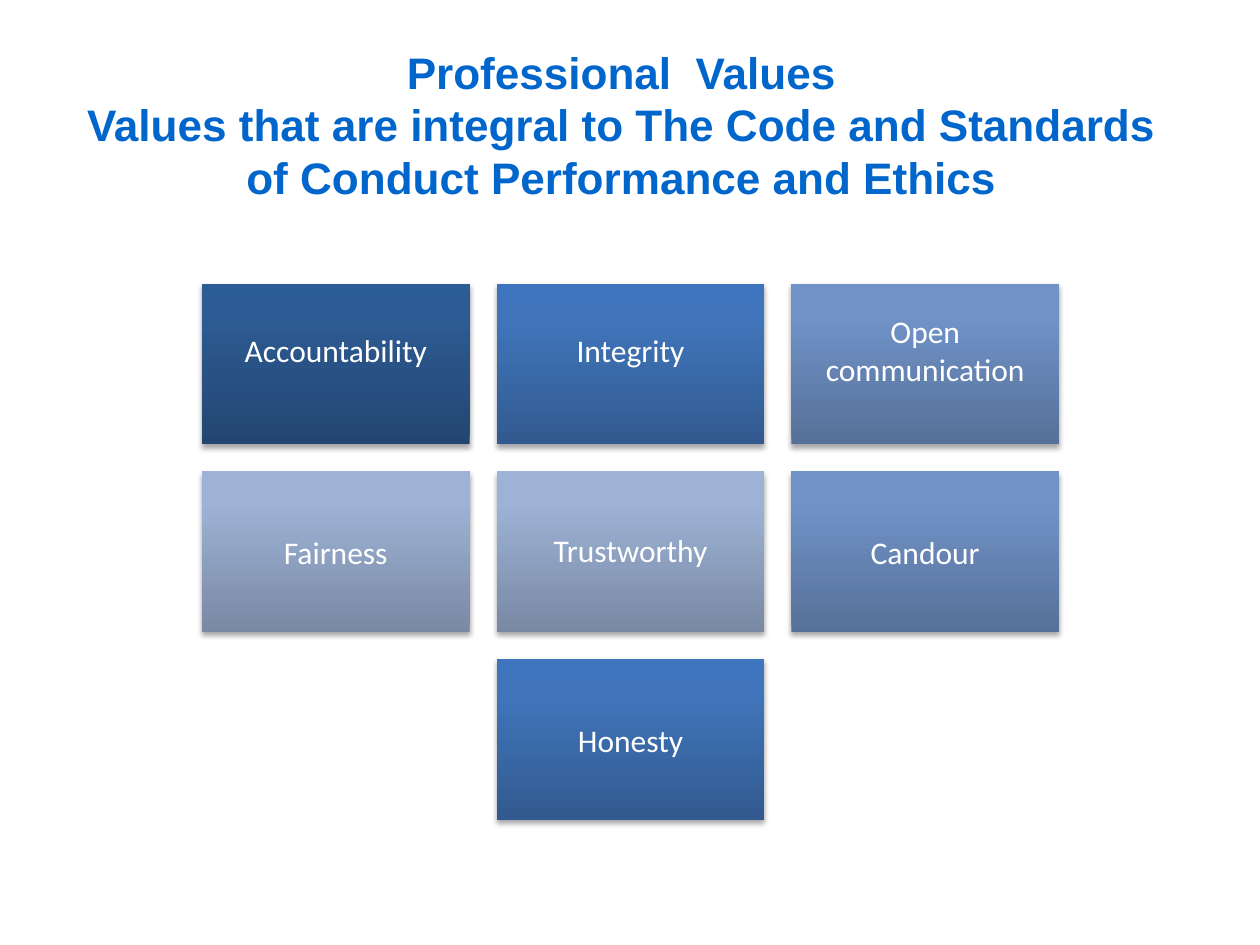
"""Build the professional values slide with its grid of gradient tiles."""
from copy import deepcopy

from lxml.etree import SubElement
from pptx import Presentation
from pptx.dml.color import RGBColor
from pptx.enum.shapes import MSO_SHAPE
from pptx.enum.text import MSO_ANCHOR, PP_ALIGN
from pptx.oxml.ns import qn
from pptx.util import Pt

COLORS = {"title": "0066CC", "text": "FFFFFF", "shadow": "000000"}
GRADIENTS = {
    "navy": ("234671", "2D5B93", "2B5C96"),
    "blue": ("325A90", "4075BB", "3E75BE"),
    "steel": ("567199", "7092C7", "6F93CA"),
    "pale": ("7989A4", "9DB2D5", "9DB2D7"),
}
STOPS = (0, 0.8, 1)
TILE_WIDTH, TILE_HEIGHT, GAP = 153, 91.8, 15.4
GRID_LEFT, GRID_TOP = 115.4, 162.2
INSET, RAISED_INSET = 5, 21.5
TILES = [
    ("Accountability", "navy", 0, 0, RAISED_INSET, 1),
    ("Integrity", "blue", 0, 1, RAISED_INSET, 1),
    ("Open communication", "steel", 0, 2, RAISED_INSET, 1),
    ("Fairness", "pale", 1, 0, INSET, 1),
    ("Trustworthy", "pale", 1, 1, INSET, 0.9),
    ("Candour", "steel", 1, 2, INSET, 1),
    ("Honesty", "blue", 2, 1, INSET, 1),
]


def add_span(para, text, font_name, size, color, bold=False):
    span = para.add_run()
    span.text = text
    span.font.name = font_name
    span.font.size = Pt(size)
    span.font.bold = bold
    span.font.color.rgb = RGBColor.from_string(color)


def style_tile(tile, gradient):
    tile.line.fill.background()
    tile.fill.gradient()
    tile.fill.gradient_angle = 90
    stop_list = tile._element.spPr.find(".//" + qn("a:gsLst"))
    stop_list.append(deepcopy(stop_list[-1]))
    for stop, position, color in zip(tile.fill.gradient_stops, STOPS, gradient):
        stop.position = position
        stop.color.rgb = RGBColor.from_string(color)
    tile.shadow.inherit = False
    effects = tile._element.spPr.find(qn("a:effectLst"))
    shadow = SubElement(effects, qn("a:outerShdw"), blurRad=str(Pt(3.1)),
                        dist=str(Pt(1.8)), dir="5400000", rotWithShape="0")
    shadow_color = SubElement(shadow, qn("a:srgbClr"), val=COLORS["shadow"])
    SubElement(shadow_color, qn("a:alpha"), val="35000")


deck = Presentation()
deck.slide_width, deck.slide_height = Pt(720), Pt(540)
page = deck.slides.add_slide(deck.slide_layouts[6])

title = page.shapes.add_textbox(Pt(31), Pt(15.1), Pt(648), Pt(136.1))
frame = title.text_frame
frame.word_wrap = True
frame.vertical_anchor = MSO_ANCHOR.MIDDLE
frame.margin_bottom = Pt(28)
para = frame.paragraphs[0]
para.alignment = PP_ALIGN.CENTER
para.line_spacing = Pt(30)
add_span(para, "Professional  Values", "Arial", 25.2, COLORS["title"], True)
para.add_line_break()
add_span(para, "Values that are integral to The Code and Standards of Conduct "
         "Performance and Ethics", "Arial", 25.2, COLORS["title"], True)

for label, gradient_name, row, column, bottom_inset, spacing in TILES:
    tile = page.shapes.add_shape(
        MSO_SHAPE.RECTANGLE,
        Pt(GRID_LEFT + column * (TILE_WIDTH + GAP)),
        Pt(GRID_TOP + row * (TILE_HEIGHT + GAP)),
        Pt(TILE_WIDTH), Pt(TILE_HEIGHT))
    style_tile(tile, GRADIENTS[gradient_name])
    frame = tile.text_frame
    frame.word_wrap = True
    frame.vertical_anchor = MSO_ANCHOR.MIDDLE
    frame.margin_left = frame.margin_right = frame.margin_top = Pt(INSET)
    frame.margin_bottom = Pt(bottom_inset)
    para = frame.paragraphs[0]
    para.alignment = PP_ALIGN.CENTER
    para.line_spacing = spacing
    add_span(para, label, "Calibri", 18, COLORS["text"])

deck.save("out.pptx")
